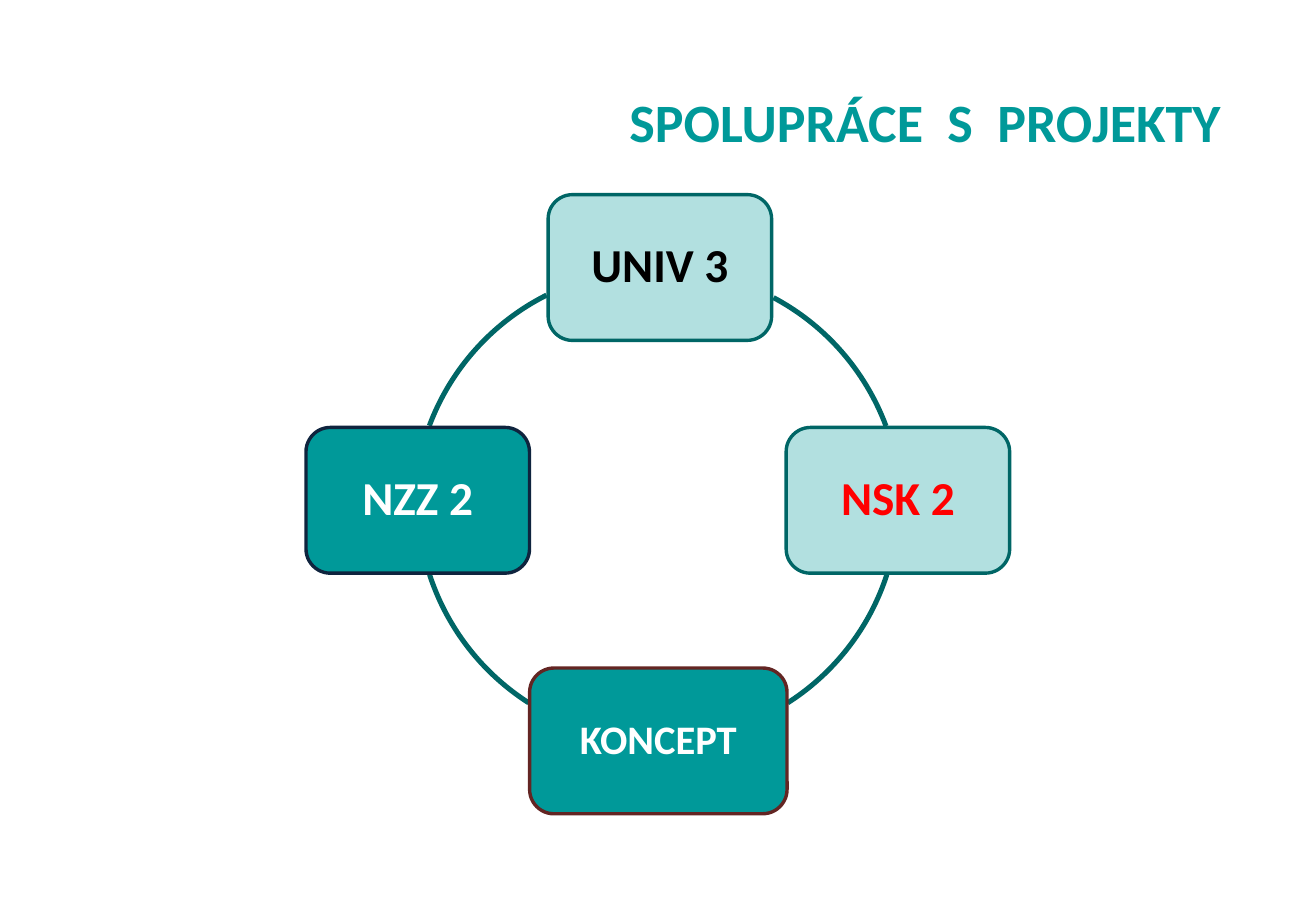
"""Build the slide showing the ring of cooperating projects."""
from lxml import etree
from pptx import Presentation
from pptx.dml.color import RGBColor
from pptx.enum import shapes, text
from pptx.oxml import ns
from pptx.util import Pt

TEAL = RGBColor(0x00, 0x99, 0x99)
DARK_TEAL = RGBColor(0x00, 0x66, 0x66)
MAROON = RGBColor(0x63, 0x25, 0x23)
NAVY = RGBColor(0x0F, 0x24, 0x3E)
BLACK = RGBColor(0x00, 0x00, 0x00)
RED = RGBColor(0xFF, 0x00, 0x00)
WHITE = RGBColor(0xFF, 0xFF, 0xFF)

FONT = "Calibri"
RING_SIZE = 285
BOX_HEIGHT = 86.4

presentation = Presentation()
presentation.slide_width, presentation.slide_height = Pt(780), Pt(540)
slide = presentation.slides.add_slide(presentation.slide_layouts[5])

title = slide.shapes.title
title.left, title.top, title.width, title.height = Pt(39), Pt(21.6), Pt(702), Pt(90)
title.text_frame.vertical_anchor = text.MSO_ANCHOR.MIDDLE
heading = title.text_frame.paragraphs[0]
heading.alignment = text.PP_ALIGN.RIGHT
for wording, size in (("SPOLUPRÁCE  S  PROJEKTY", 32), (" ", 44)):
    run = heading.add_run()
    run.text = wording
    run.font.name = FONT
    run.font.size = Pt(size)
    run.font.bold = True
    run.font.color.rgb = TEAL

ring_parts = (
    (249.1, 159.8, 298, 339.6),
    (247.7, 154.1, 18, 57.4),
    (247.7, 154.1, 122.6, 162),
    (245.5, 159.8, 200.5, 243.3),
)
for left, top, start, end in ring_parts:
    arc = slide.shapes.add_shape(
        shapes.MSO_SHAPE.ARC, Pt(left), Pt(top), Pt(RING_SIZE), Pt(RING_SIZE))
    arc.adjustments[0] = start * 0.6
    arc.adjustments[1] = end * 0.6
    arc.shadow.inherit = False
    arc.fill.background()
    arc.line.color.rgb = DARK_TEAL
    arc.line.width = Pt(3)

projects = (
    ("UNIV 3", 324.9, 115.4, 132.5, 28, BLACK, DARK_TEAL, 30),
    ("NSK 2", 466, 253.4, 132.5, 28, RED, DARK_TEAL, 30),
    ("KONCEPT", 313.9, 396, 152.6, 24, WHITE, MAROON, 100),
    ("NZZ 2", 181.4, 253.4, 132.5, 28, WHITE, NAVY, 100),
)
for name, left, top, width, size, ink, outline, opacity in projects:
    project = slide.shapes.add_shape(
        shapes.MSO_SHAPE.ROUNDED_RECTANGLE,
        Pt(left), Pt(top), Pt(width), Pt(BOX_HEIGHT))
    project.shadow.inherit = False
    project.fill.solid()
    project.fill.fore_color.rgb = TEAL
    if opacity < 100:
        tint = project.fill._xPr.find(ns.qn("a:solidFill"))[0]
        etree.SubElement(tint, ns.qn("a:alpha"), val=str(opacity * 1000))
    project.line.color.rgb = outline
    project.line.width = Pt(2)

    frame = project.text_frame
    frame.word_wrap = True
    frame.vertical_anchor = text.MSO_ANCHOR.MIDDLE
    frame.margin_left = frame.margin_right = Pt(8)
    frame.margin_top = frame.margin_bottom = Pt(8)
    frame.text = name
    label = frame.paragraphs[0]
    label.alignment = text.PP_ALIGN.CENTER
    label.line_spacing = 0.9
    label.runs[0].font.name = FONT
    label.runs[0].font.size = Pt(size)
    label.runs[0].font.bold = True
    label.runs[0].font.color.rgb = ink

presentation.save("out.pptx")
